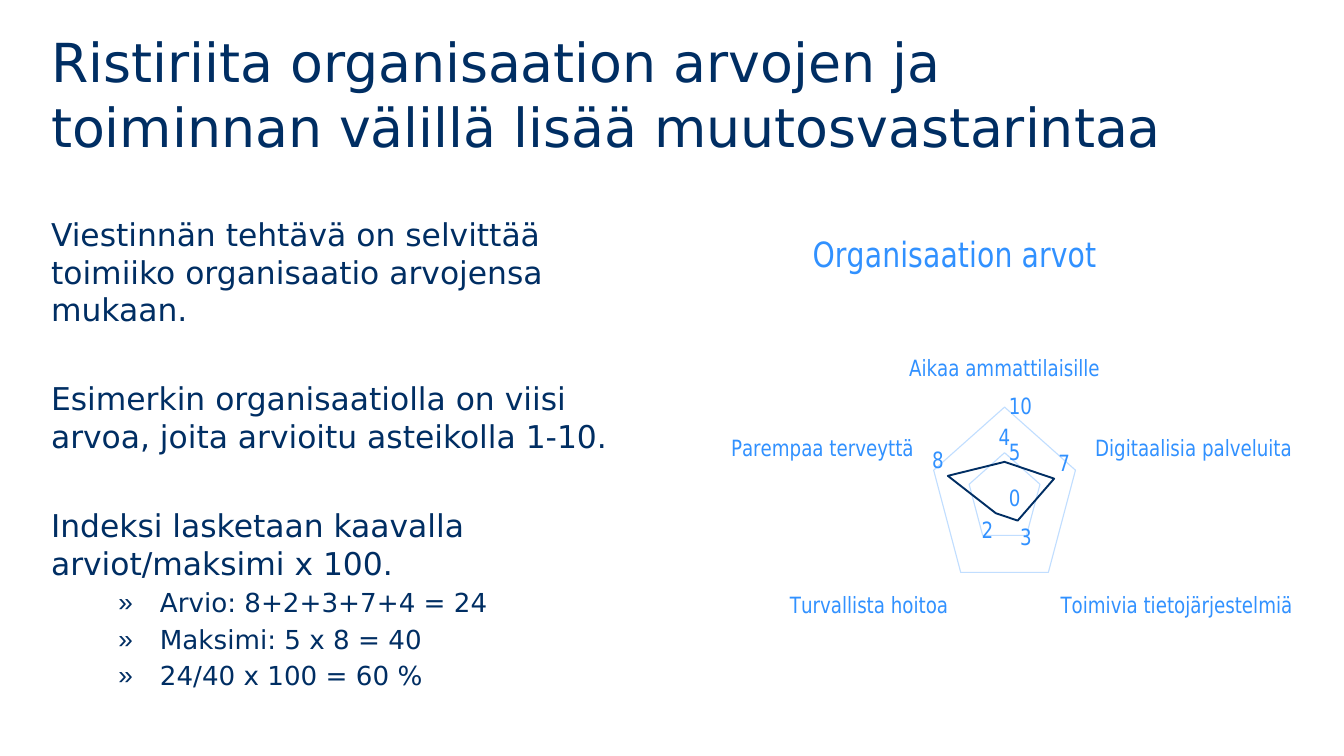
from lxml import etree
from pptx import Presentation
from pptx.chart.data import CategoryChartData
from pptx.dml.color import RGBColor
from pptx.enum.chart import XL_CHART_TYPE as ChartType, XL_TICK_MARK as TickMark
from pptx.enum.text import MSO_ANCHOR as Anchor, PP_ALIGN as Align
from pptx.oxml.ns import qn
from pptx.util import Inches, Pt

TITLE = "Ristiriita organisaation arvojen ja toiminnan välillä lisää muutosvastarintaa"
STATEMENTS = [
    "Viestinnän tehtävä on selvittää toimiiko organisaatio arvojensa mukaan.",
    "Esimerkin organisaatiolla on viisi arvoa, joita arvioitu asteikolla 1-10.",
    "Indeksi lasketaan kaavalla arviot/maksimi x 100.",
]
CALCULATION = ["Arvio: 8+2+3+7+4 = 24", "Maksimi: 5 x 8 = 40", "24/40 x 100 = 60 %"]
CHART_TITLE = "Organisaation arvot"
RATINGS = {
    "Aikaa ammattilaisille": 4,
    "Digitaalisia palveluita": 7,
    "Toimivia tietojärjestelmiä": 3,
    "Turvallista hoitoa": 2,
    "Parempaa terveyttä": 8,
}

COLORS = {"navy": "002E63", "blue": "3191FF", "pale": "C1DEFF"}
FONT = "DejaVu Sans"
PAGE_WIDTH = 10
PAGE_HEIGHT = PAGE_WIDTH * 9 / 16
LEFT, BODY_TOP, COLUMN_WIDTH, BODY_HEIGHT = 0.38, 1.55, 4.25, 3.57
CHART_LEFT = PAGE_WIDTH - LEFT - COLUMN_WIDTH


def color(name):
    return RGBColor.from_string(COLORS[name])


def style_font(font, size, name):
    font.size, font.name, font.bold = Pt(size), FONT, False
    font.color.rgb = color(name)


def style_line(line, name, width):
    line.color.rgb = color(name)
    line.width = Pt(width)


def place(shape, left, top, width, height):
    shape.left, shape.top = Inches(left), Inches(top)
    shape.width, shape.height = Inches(width), Inches(height)


def prepare_frame(shape, anchor):
    frame = shape.text_frame
    frame.word_wrap = True
    frame.vertical_anchor = anchor
    frame.margin_left = frame.margin_right = 0
    frame.margin_top = frame.margin_bottom = Inches(0.05)
    return frame


def set_bullet(para, char=None):
    props = para._p.get_or_add_pPr()
    props.set("marL", str(Inches(0.81 if char else 0)))
    props.set("indent", str(Inches(-0.31 if char else 0)))
    if char:
        tint = etree.SubElement(props, qn("a:buClr"))
        etree.SubElement(tint, qn("a:srgbClr"), val=COLORS["navy"])
        etree.SubElement(props, qn("a:buChar"), char=char)
    else:
        etree.SubElement(props, qn("a:buNone"))


def write(para, text, size, before=0):
    para.alignment = Align.LEFT
    para.line_spacing = 1.0
    para.space_before = Pt(before)
    span = para.add_run()
    span.text = text
    style_font(span.font, size, "navy")


def add_radar(page):
    data = CategoryChartData(number_format="General")
    data.categories = list(RATINGS)
    data.add_series(CHART_TITLE, list(RATINGS.values()))
    chart = page.shapes.add_chart(
        ChartType.RADAR, Inches(CHART_LEFT), Inches(BODY_TOP),
        Inches(COLUMN_WIDTH), Inches(BODY_HEIGHT), data).chart
    style_font(chart.font, 10, "navy")
    chart.has_legend = False

    chart.has_title = True
    chart.chart_title.include_in_layout = False
    span = chart.chart_title.text_frame.paragraphs[0].add_run()
    span.text = CHART_TITLE
    style_font(span.font, 18.6, "blue")

    for axis in (chart.category_axis, chart.value_axis):
        axis.major_tick_mark = axis.minor_tick_mark = TickMark.NONE
        style_font(axis.tick_labels.font, 12, "blue")
    style_line(chart.category_axis.format.line, "pale", 0.75)
    chart.category_axis.has_major_gridlines = False
    scale = chart.value_axis
    scale.minimum_scale, scale.maximum_scale, scale.major_unit = 0, 10, 5
    scale.format.line.fill.background()
    scale.has_major_gridlines = True
    style_line(scale.major_gridlines.format.line, "pale", 0.75)

    plot = chart.plots[0]
    plot.vary_by_categories = False
    series = plot.series[0]
    series.smooth = False
    style_line(series.format.line, "navy", 1.25)
    labels = series.data_labels
    labels.show_value = True
    style_font(labels.font, 12, "blue")


def main():
    deck = Presentation()
    deck.slide_width, deck.slide_height = Inches(PAGE_WIDTH), Inches(PAGE_HEIGHT)
    page = deck.slides.add_slide(deck.slide_layouts[1])

    title = page.shapes.title
    place(title, LEFT, 0.15, 8.62, 1.09)
    write(prepare_frame(title, Anchor.MIDDLE).paragraphs[0], TITLE, 28.8)

    body = page.placeholders[1]
    place(body, LEFT, BODY_TOP, COLUMN_WIDTH, BODY_HEIGHT)
    frame = prepare_frame(body, Anchor.TOP)
    for index, text in enumerate(STATEMENTS):
        para = frame.add_paragraph() if index else frame.paragraphs[0]
        set_bullet(para)
        write(para, text, 16.8, before=27.5 if index else 0)
    for text in CALCULATION:
        para = frame.add_paragraph()
        para.level = 1
        set_bullet(para, "»")
        write(para, text, 14, before=2.8)

    add_radar(page)
    deck.save("out.pptx")


if __name__ == "__main__":
    main()
